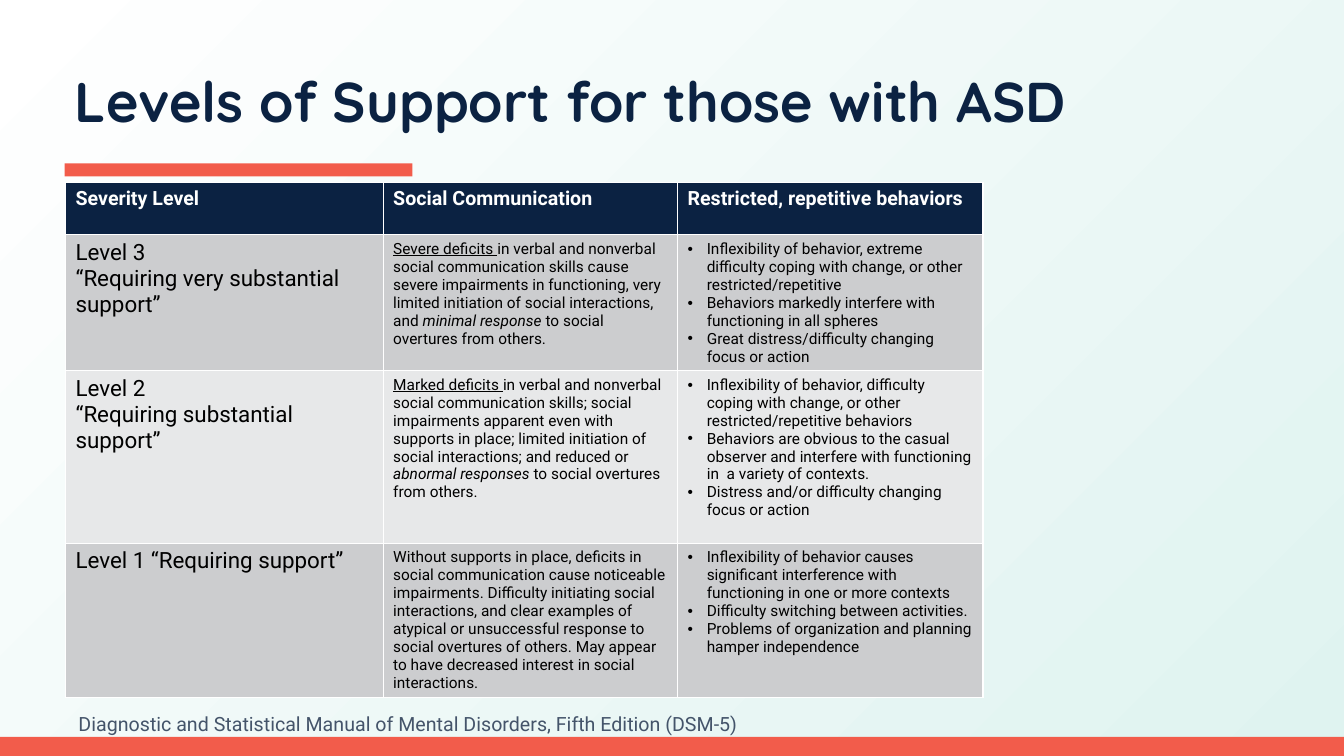
from lxml import etree
from pptx import Presentation
from pptx import util as u
from pptx.dml.color import RGBColor
from pptx.enum import shapes, text
from pptx.oxml import ns

NAVY = RGBColor(0x0B, 0x22, 0x42)
CORAL = RGBColor(0xF2, 0x5C, 0x4B)
MINT = RGBColor(0xDF, 0xF3, 0xF0)
WHITE = RGBColor(0xFF, 0xFF, 0xFF)
BLACK = RGBColor(0, 0, 0)
SLATE = RGBColor(0x44, 0x54, 0x6A)
DARK_BAND = RGBColor(0xCC, 0xCD, 0xCF)
LIGHT_BAND = RGBColor(0xE7, 0xE8, 0xE9)

TITLE = "Levels of Support for those with ASD"
SOURCE = "Diagnostic and Statistical Manual of Mental Disorders, Fifth Edition (DSM-5)"
HEADERS = ["Severity Level", "Social Communication", "Restricted, repetitive behaviors"]
LEVELS = [
    (
        ["Level 3", "“Requiring very substantial support”"],
        [
            ("Severe deficits ", "underline"),
            ("in verbal and nonverbal social communication skills cause severe impairments "
             "in functioning, very limited initiation of social interactions, and ", None),
            ("minimal response ", "italic"),
            ("to social overtures from others.", None),
        ],
        [
            "Inflexibility of behavior, extreme difficulty coping with change, or other "
            "restricted/repetitive",
            "Behaviors markedly interfere with functioning in all spheres",
            "Great distress/difficulty changing focus or action",
        ],
    ),
    (
        ["Level 2", "“Requiring substantial support”"],
        [
            ("Marked deficits ", "underline"),
            ("in verbal and nonverbal social communication skills; social impairments apparent "
             "even with supports in place; limited initiation of social interactions; "
             "and reduced or ", None),
            ("abnormal responses ", "italic"),
            ("to social overtures from others.", None),
        ],
        [
            "Inflexibility of behavior, difficulty coping with change, or other "
            "restricted/repetitive behaviors",
            "Behaviors are obvious to the casual observer and interfere with functioning "
            "in  a variety of contexts.",
            "Distress and/or difficulty changing focus or action",
        ],
    ),
    (
        ["Level 1 “Requiring support”"],
        [
            ("Without supports in place, deficits in social communication cause noticeable "
             "impairments. Difficulty initiating social interactions, and clear examples of "
             "atypical or unsuccessful response to social overtures of others. May appear to "
             "have decreased interest in social interactions.", None),
        ],
        [
            "Inflexibility of behavior causes significant interference with functioning "
            "in one or more contexts",
            "Difficulty switching between activities.",
            "Problems of organization and planning hamper independence",
        ],
    ),
]
BARS = [(-0.04, 7.31, 13.37, 0.19), (0.64, 1.62, 3.45, 0.13)]
COLUMN_WIDTHS = [3.15, 2.92, 3.03]
ROW_HEIGHTS = [0.52, 1.34, 1.71, 1.53]
BULLET_INDENT = u.Inches(0.19)


def add_span(para, words, size, color, font="Roboto", bold=False, style=None):
    span = para.add_run()
    span.text = words
    span.font.name = font
    span.font.size = u.Pt(size)
    span.font.bold = bold
    span.font.color.rgb = color
    span.font.underline = style == "underline"
    span.font.italic = style == "italic"


def add_bullet(para):
    properties = para._p.get_or_add_pPr()
    properties.set("marL", str(BULLET_INDENT))
    properties.set("indent", str(-BULLET_INDENT))
    etree.SubElement(properties, ns.qn("a:buFont"), typeface="Arial")
    etree.SubElement(properties, ns.qn("a:buChar"), char="•")


def fill_cell(cell, paragraphs, fill, size, color=BLACK, bold=False, bulleted=False):
    cell.fill.solid()
    cell.fill.fore_color.rgb = fill
    frame = cell.text_frame
    for index, spans in enumerate(paragraphs):
        para = frame.add_paragraph() if index else frame.paragraphs[0]
        if bulleted:
            add_bullet(para)
        for words, style in spans:
            add_span(para, words, size, color, bold=bold, style=style)


def plain(lines):
    return [[(line, None)] for line in lines]


def add_background(page):
    fill = page.background.fill
    fill.gradient()
    fill.gradient_angle = 135
    for stop, color, position in zip(fill.gradient_stops, (MINT, WHITE), (0, 1)):
        stop.color.rgb = color
        stop.position = position


def add_bars(page):
    for place in BARS:
        bar = page.shapes.add_shape(shapes.MSO_SHAPE.RECTANGLE, *map(u.Inches, place))
        bar.shadow.inherit = False
        bar.fill.solid()
        bar.fill.fore_color.rgb = CORAL
        bar.line.fill.background()


def add_title(page):
    title = page.shapes.title
    title.left, title.top, title.width, title.height = map(u.Inches, (0.64, 0.64, 12.06, 1))
    frame = title.text_frame
    frame.auto_size = text.MSO_AUTO_SIZE.NONE
    frame.vertical_anchor = text.MSO_ANCHOR.TOP
    frame.margin_top = u.Inches(0.08)
    para = frame.paragraphs[0]
    para.alignment = text.PP_ALIGN.LEFT
    para.line_spacing = u.Pt(44)
    add_span(para, TITLE, 40, NAVY, font="Quicksand", bold=True)


def add_levels_table(page):
    place = (0.65, 1.81, sum(COLUMN_WIDTHS), sum(ROW_HEIGHTS))
    table = page.shapes.add_table(
        len(ROW_HEIGHTS), len(COLUMN_WIDTHS), *map(u.Inches, place)).table
    for column, width in zip(table.columns, COLUMN_WIDTHS):
        column.width = u.Inches(width)
    for row, height in zip(table.rows, ROW_HEIGHTS):
        row.height = u.Inches(height)
    for column, header in enumerate(HEADERS):
        fill_cell(table.cell(0, column), plain([header]), NAVY, 14, WHITE, bold=True)
    for row, (level, communication, behaviors) in enumerate(LEVELS, 1):
        band = DARK_BAND if row % 2 else LIGHT_BAND
        fill_cell(table.cell(row, 0), plain(level), band, 16)
        fill_cell(table.cell(row, 1), [communication], band, 11)
        fill_cell(table.cell(row, 2), plain(behaviors), band, 11, bulleted=True)


def add_source(page):
    box = page.shapes.add_textbox(*map(u.Inches, (0.68, 7.01, 9.05, 0.34)))
    box.text_frame.word_wrap = True
    add_span(box.text_frame.paragraphs[0], SOURCE, 14, SLATE)


def main():
    deck = Presentation()
    deck.slide_width, deck.slide_height = u.Inches(13.33), u.Inches(7.5)
    page = deck.slides.add_slide(deck.slide_layouts[5])
    add_background(page)
    add_bars(page)
    add_title(page)
    add_levels_table(page)
    add_source(page)
    deck.save("out.pptx")


if __name__ == "__main__":
    main()
